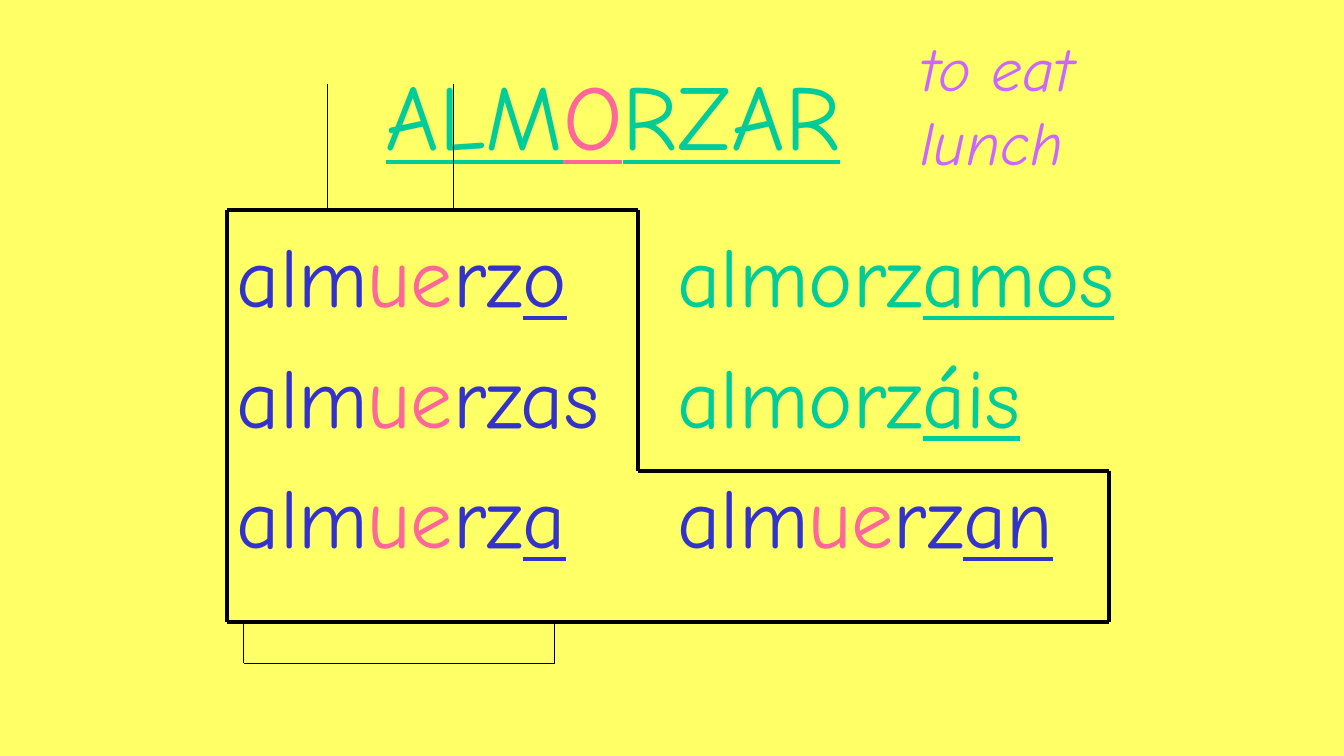
from itertools import pairwise
from lxml.etree import SubElement
from pptx import Presentation
from pptx.dml.color import RGBColor
from pptx.enum.shapes import MSO_CONNECTOR
from pptx.enum.text import MSO_ANCHOR, PP_ALIGN
from pptx.oxml.ns import qn
from pptx.util import Inches, Pt

HUES = {
    "page": "FFFF66",
    "green": "00CC99",
    "pink": "FF6699",
    "blue": "3333CC",
    "violet": "CC66FF",
    "black": "000000",
}


def hue(name):
    return RGBColor.from_string(HUES[name])


def put(para, text, color="blue", size=60, font="Comic Neue", under=False, slant=False):
    run = para.add_run()
    run.text = text
    face = run.font
    face.name = font
    face.size = Pt(size)
    face.color.rgb = hue(color)
    face.underline = under
    face.italic = slant


class Board:
    def __init__(self, deck, font):
        self.font = font
        self.slide = deck.slides.add_slide(deck.slide_layouts[6])
        fill = self.slide.background.fill
        fill.solid()
        fill.fore_color.rgb = hue("page")

    def text(self, box, lines, size=60, gap=0, align=PP_ALIGN.LEFT,
             anchor=MSO_ANCHOR.TOP, wrap=True, slant=False):
        frame = self.slide.shapes.add_textbox(*map(Inches, box)).text_frame
        frame.word_wrap = wrap
        frame.vertical_anchor = anchor
        for i, parts in enumerate(lines):
            para = frame.add_paragraph() if i else frame.paragraphs[0]
            para.alignment = align
            para.space_before = Pt(gap)
            for word, color, under in parts:
                put(para, word, color=color, size=size, font=self.font,
                    under=under, slant=slant)

    def trace(self, points, width):
        for start, end in pairwise(points):
            line = self.slide.shapes.add_connector(
                MSO_CONNECTOR.STRAIGHT, *map(Inches, start + end))
            line.line.color.rgb = hue("black")
            line.line.width = Pt(width)
            SubElement(line._element.spPr, qn("a:effectLst"))


def boot(tail, end=""):
    parts = [("alm", "blue", False), ("ue", "pink", False), ("rz" + tail, "blue", False)]
    return parts + [(end, "blue", True)] if end else parts


def plain(end):
    return [("almorz", "green", False), (end, "green", True)]


def main():
    deck = Presentation()
    deck.slide_width, deck.slide_height = Inches(13.33), Inches(7.5)
    board = Board(deck, "Comic Neue")

    title = [("ALM", "green", True), ("O", "pink", True), ("RZAR", "green", True)]
    board.text((1.83, 0.5, 8.5, 1.25), [title], size=66,
               align=PP_ALIGN.CENTER, anchor=MSO_ANCHOR.MIDDLE)
    board.text((2.25, 2.17, 4.17, 4.5),
               [boot("", "o"), boot("as"), boot("", "a")], gap=14)
    board.text((6.62, 2.17, 4.92, 4.5),
               [plain("amos"), plain("áis"), boot("", "an")], gap=14)

    left, mid, right = 2.25, 6.33, 11
    top, step, base = 2.08, 4.67, 6.17
    board.trace([(left, top), (mid, top), (mid, step), (right, step),
                 (right, base), (left, base), (left, top)], 3)
    for x in (3.25, 4.5):
        board.trace([(x, 0.83), (x, top)], 0.75)
    heel, toe, sole = 2.42, 5.5, 6.58
    board.trace([(heel, base), (heel, sole), (toe, sole), (toe, base)], 0.75)

    board.text((9.03, 0.25, 2.13, 1.58),
               [[(word, "violet", False)] for word in ("to eat", "lunch")],
               size=44, wrap=False, slant=True)
    deck.save("out.pptx")


if __name__ == "__main__":
    main()
